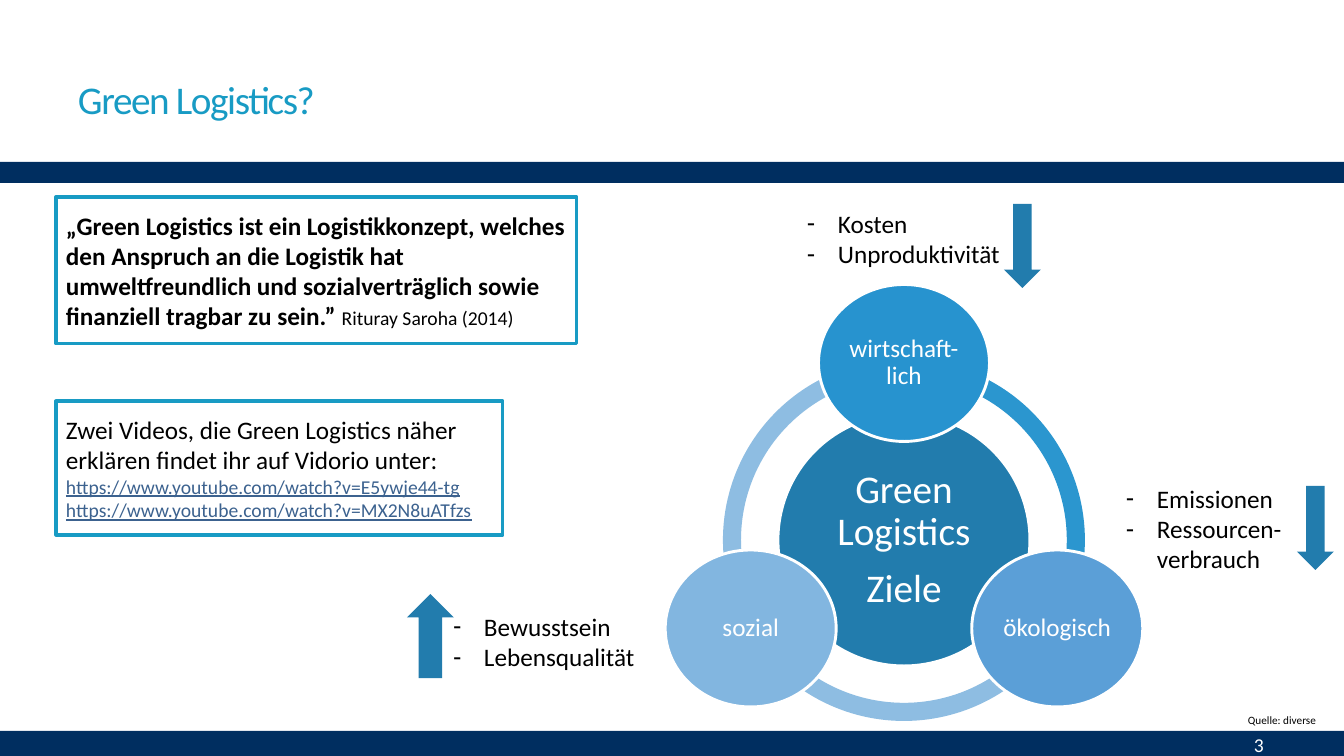
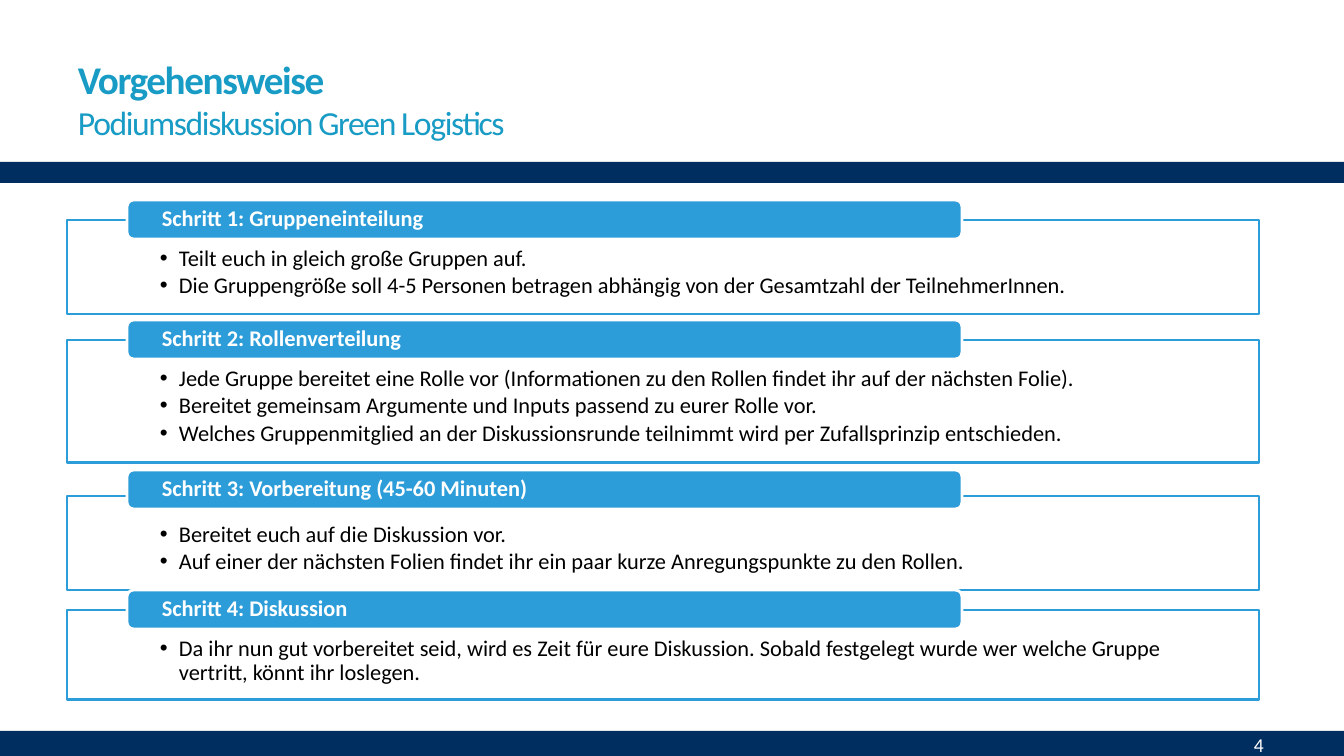
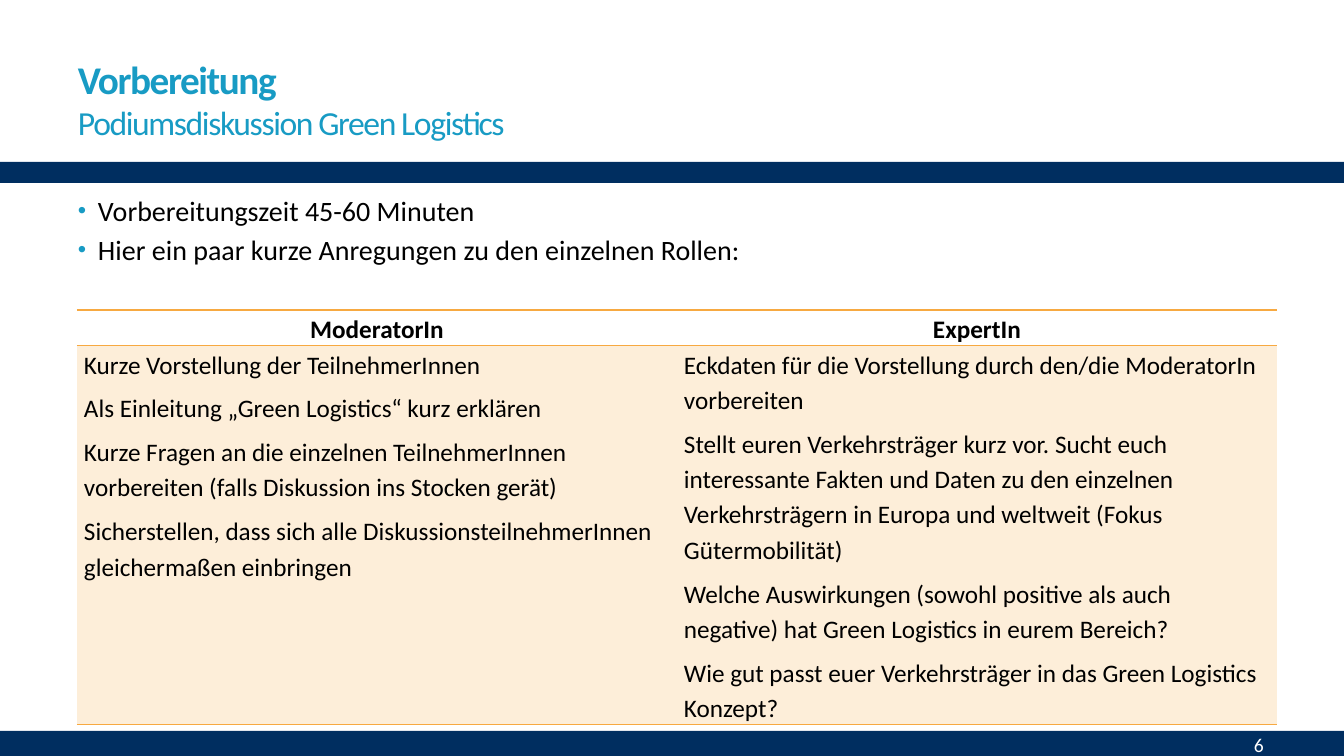
"""Builds three slides on green logistics and a panel discussion."""
import math

import pptx
import pptx.dml.color
import pptx.enum.shapes
import pptx.enum.text
import pptx.oxml
import pptx.oxml.ns
import pptx.util

RGB = pptx.dml.color.RGBColor
SHAPE = pptx.enum.shapes.MSO_SHAPE
ANCHOR = pptx.enum.text.MSO_ANCHOR
ALIGN = pptx.enum.text.PP_ALIGN

NAVY = RGB(0x00, 0x2E, 0x60)
TEAL = RGB(0x18, 0x9B, 0xC4)
STEEL = RGB(0x22, 0x7C, 0xAD)
STEP_BLUE = RGB(0x2D, 0x9D, 0xD9)
ECONOMIC = RGB(0x27, 0x93, 0xCF)
ECOLOGICAL = RGB(0x5B, 0x9F, 0xD7)
SOCIAL = RGB(0x82, 0xB6, 0xE0)
ARC_DARK = RGB(0x2B, 0x96, 0xCF)
ARC_LIGHT = RGB(0x8E, 0xBD, 0xE2)
LINK = RGB(0x3C, 0x62, 0x8F)
ORANGE = RGB(0xF7, 0xA9, 0x41)
PEACH = RGB(0xFD, 0xEE, 0xD9)
BLACK = RGB(0, 0, 0)
WHITE = RGB(255, 255, 255)

FONT = "Calibri"
WIDTH, HEIGHT = 1344, 756
EMU_PER_PX = 914400 / 100.8


def px(length):
    return round(length * EMU_PER_PX)


class Deck:
    """Holds the shared style and the slide being built."""

    def __init__(self):
        self.presentation = pptx.Presentation()
        self.presentation.slide_width = px(WIDTH)
        self.presentation.slide_height = px(HEIGHT)
        self.slide = None

    def start(self, number, heading, subheading=None, with_body=False):
        layout = self.presentation.slide_layouts[1 if with_body else 5]
        self.slide = self.presentation.slides.add_slide(layout)
        self.shape(SHAPE.RECTANGLE, 0, 162, WIDTH, 21, NAVY)
        self.shape(SHAPE.RECTANGLE, 0, 731, WIDTH, HEIGHT - 731, NAVY)
        self.text(1117, 727, 157, 36, [str(number)], 14, WHITE, align=ALIGN.RIGHT, anchor=ANCHOR.MIDDLE)
        title = self.slide.shapes.title
        self.place(title, 68, 44, 905, 109)
        lines = [heading, subheading] if subheading else [heading]
        self.fill_text(title.text_frame, lines, 28, TEAL, anchor=ANCHOR.MIDDLE)
        for paragraph in title.text_frame.paragraphs:
            paragraph.runs[0].font._element.set("spc", "-100")
        if subheading:
            first, second = title.text_frame.paragraphs
            first.runs[0].font.bold = True
            second.runs[0].font.size = pptx.util.Pt(24)

    def place(self, item, left, top, width, height):
        item.left, item.top = px(left), px(top)
        item.width, item.height = px(width), px(height)

    def fill_text(self, frame, lines, size, color, bold=False, align=ALIGN.LEFT, anchor=ANCHOR.TOP,
                  insets=(10, 5, 10, 5), spacing=1.0, gap=0, bullet=None, indent=0, bullet_color=None):
        frame.text = "\n".join(lines)
        frame.word_wrap = True
        frame.auto_size = pptx.enum.text.MSO_AUTO_SIZE.NONE
        frame.vertical_anchor = anchor
        frame.margin_left, frame.margin_top, frame.margin_right, frame.margin_bottom = map(px, insets)
        for index, paragraph in enumerate(frame.paragraphs):
            if bullet:
                self.bullet(paragraph, bullet, indent, bullet_color)
            self.style(paragraph, size, color, bold, align, spacing, gap if index else 0)

    def style(self, paragraph, size, color, bold=False, align=ALIGN.LEFT, spacing=1.0, gap=0):
        paragraph.alignment = align
        paragraph.line_spacing = spacing
        paragraph.space_before = pptx.util.Pt(gap)
        paragraph.space_after = pptx.util.Pt(0)
        for run in paragraph.runs:
            self.font(run, size, color, bold)

    def font(self, run, size, color, bold=False):
        run.font.name = FONT
        run.font.size = pptx.util.Pt(size)
        run.font.color.rgb = color
        run.font.bold = bold

    def bullet(self, paragraph, mark, indent, color=None):
        properties = paragraph._p.get_or_add_pPr()
        properties.set("marL", str(px(indent)))
        properties.set("indent", str(-px(indent)))
        namespace = pptx.oxml.ns.nsdecls("a")
        parts = [f'<a:buFont {namespace} typeface="Arial"/>', f'<a:buChar {namespace} char="{mark}"/>']
        if color is not None:
            parts = [f'<a:buClr {namespace}><a:srgbClr val="{color}"/></a:buClr>',
                     f'<a:buSzPct {namespace} val="85000"/>'] + parts
        for part in parts:
            properties.append(pptx.oxml.parse_xml(part))

    def shape(self, kind, left, top, width, height, fill, line=None, line_width=2.08):
        item = self.slide.shapes.add_shape(kind, px(left), px(top), px(width), px(height))
        item.shadow.inherit = False
        item.fill.solid()
        item.fill.fore_color.rgb = fill
        if line is None:
            item.line.fill.background()
        else:
            item.line.color.rgb = line
            item.line.width = pptx.util.Pt(line_width)
        return item

    def text(self, left, top, width, height, lines, size, color=BLACK, **layout):
        box = self.slide.shapes.add_textbox(px(left), px(top), px(width), px(height))
        self.fill_text(box.text_frame, lines, size, color, **layout)

    def framed(self, left, top, width, height, lines):
        frame = self.shape(SHAPE.RECTANGLE, left, top, width, height, WHITE, TEAL, 2.25).text_frame
        self.fill_text(frame, lines, 18, BLACK, anchor=ANCHOR.MIDDLE)
        return frame

    def circle(self, center_x, center_y, width, height, fill, lines, size):
        item = self.shape(SHAPE.OVAL, center_x - width / 2, center_y - height / 2, width, height, fill, WHITE)
        self.fill_text(item.text_frame, lines, size, WHITE, align=ALIGN.CENTER, anchor=ANCHOR.MIDDLE,
                       insets=(3, 3, 3, 3), spacing=0.9, gap=10)

    def arc(self, center_x, center_y, radius, start, end, fill):
        item = self.shape(SHAPE.BLOCK_ARC, center_x - radius, center_y - radius, 2 * radius, 2 * radius, fill)
        item.adjustments[0] = start * 0.6
        item.adjustments[1] = end * 0.6
        item.adjustments[2] = 0.05

    def effect(self, left, top, width, height, lines):
        self.text(left, top, width, height, lines, 18, bullet="-", indent=31)

    def step(self, label_top, top, height, heading, lines):
        frame = self.shape(SHAPE.RECTANGLE, 67, top, 1192, height, WHITE, STEP_BLUE)
        self.fill_text(frame.text_frame, lines, 16, BLACK, insets=(93, 27, 93, 12), spacing=0.9,
                       gap=2.4, bullet="•", indent=19)
        label = self.shape(SHAPE.ROUNDED_RECTANGLE, 127, label_top, 835, 39, STEP_BLUE, WHITE)
        self.fill_text(label.text_frame, [heading], 16, WHITE, bold=True, anchor=ANCHOR.MIDDLE,
                       insets=(33, 0, 33, 0), spacing=0.9)

    def body(self, left, top, width, height, lines):
        placeholder = self.slide.placeholders[1]
        self.place(placeholder, left, top, width, height)
        self.fill_text(placeholder.text_frame, lines, 20, BLACK, gap=4, bullet="•", indent=20,
                       bullet_color=TEAL)

    def table(self, left, top, column_width, row_heights, columns):
        frame = self.slide.shapes.add_table(len(row_heights), len(columns), px(left), px(top),
                                            px(column_width * len(columns)), px(sum(row_heights)))
        grid = frame.table
        grid.first_row = grid.horz_banding = False
        for row, height in zip(grid.rows, row_heights):
            row.height = px(height)
        for column, (heading, lines) in enumerate(columns):
            grid.columns[column].width = px(column_width)
            self.cell(grid.cell(0, column), [heading], None, bold=True, align=ALIGN.CENTER)
            self.cell(grid.cell(1, column), lines, PEACH)

    def cell(self, cell, lines, fill, bold=False, align=ALIGN.LEFT):
        cell.text = "\n".join(lines)
        cell.margin_left = cell.margin_right = px(7)
        cell.margin_top = cell.margin_bottom = 0
        for index, paragraph in enumerate(cell.text_frame.paragraphs):
            self.style(paragraph, 18, BLACK, bold, align, 1.15, 6 if index else 0)
        if fill is None:
            cell.fill.background()
        else:
            cell.fill.solid()
            cell.fill.fore_color.rgb = fill
        namespace = pptx.oxml.ns.nsdecls("a")
        visible = f'<a:solidFill><a:srgbClr val="{ORANGE}"/></a:solidFill>'
        for index, (side, paint) in enumerate(
                [("L", "<a:noFill/>"), ("R", "<a:noFill/>"), ("T", visible), ("B", visible)]):
            border = pptx.oxml.parse_xml(f'<a:ln{side} {namespace} w="12700">{paint}</a:ln{side}>')
            cell._tc.get_or_add_tcPr().insert(index, border)


def goals(deck):
    deck.start(3, "Green Logistics?")
    quote = deck.framed(56, 197, 521, 147, [
        "„Green Logistics ist ein Logistikkonzept, welches den Anspruch an die Logistik hat "
        "umweltfreundlich und sozialverträglich sowie finanziell tragbar zu sein.” "])
    quote.paragraphs[0].runs[0].font.bold = True
    author = quote.paragraphs[0].add_run()
    author.text = "Rituray Saroha (2014)"
    deck.font(author, 14, BLACK)

    videos = deck.framed(56, 401, 447, 134, [
        "Zwei Videos, die Green Logistics näher erklären findet ihr auf Vidorio unter:",
        "https://www.youtube.com/watch?v=E5ywje44-tg",
        "https://www.youtube.com/watch?v=MX2N8uATfzs"])
    for address in videos.paragraphs[1:]:
        deck.font(address.runs[0], 14, LINK)
        address.runs[0].font.underline = True

    center_x, center_y, orbit = 904, 540, 177
    for start, fill in [(30, ARC_LIGHT), (150, ARC_LIGHT), (270, ARC_DARK)]:
        deck.arc(center_x, center_y, 181, start, (start + 120) % 360, fill)
    deck.circle(center_x, center_y, 252, 252, STEEL, ["Green Logistics", "Ziele"], 28)
    for angle, goal, fill in [(270, "wirtschaft-lich", ECONOMIC), (30, "ökologisch", ECOLOGICAL),
                              (150, "sozial", SOCIAL)]:
        turn = math.radians(angle)
        deck.circle(center_x + orbit * math.cos(turn), center_y + orbit * math.sin(turn),
                    171, 157, fill, [goal], 18)

    deck.effect(443, 606, 246, 72, ["Bewusstsein", "Lebensqualität"])
    deck.effect(797, 203, 278, 72, ["Kosten", "Unproduktivität"])
    deck.effect(1116, 478, 190, 102, ["Emissionen", "Ressourcen-\vverbrauch"])
    deck.shape(SHAPE.UP_ARROW, 407, 594, 47, 84, STEEL)
    for left, top in [(1004, 204), (1297, 486)]:
        deck.shape(SHAPE.DOWN_ARROW, left, top, 37, 84, STEEL)
    deck.text(1238, 708, 105, 24, ["Quelle: diverse"], 8)


def procedure(deck):
    deck.start(4, "Vorgehensweise", "Podiumsdiskussion Green Logistics")
    steps = [
        (220, 94, "Schritt 1: Gruppeneinteilung", [
            "Teilt euch in gleich große Gruppen auf.",
            "Die Gruppengröße soll 4-5 Personen betragen abhängig von der Gesamtzahl der TeilnehmerInnen."]),
        (340, 123, "Schritt 2: Rollenverteilung", [
            "Jede Gruppe bereitet eine Rolle vor (Informationen zu den Rollen findet ihr auf der nächsten Folie).",
            "Bereitet gemeinsam Argumente und Inputs passend zu eurer Rolle vor.",
            "Welches Gruppenmitglied an der Diskussionsrunde teilnimmt wird per Zufallsprinzip entschieden."]),
        (496, 94, "Schritt 3: Vorbereitung (45-60 Minuten)", [
            "Bereitet euch auf die Diskussion vor.",
            "Auf einer der nächsten Folien findet ihr ein paar kurze Anregungspunkte zu den Rollen."]),
        (610, 90, "Schritt 4: Diskussion", [
            "Da ihr nun gut vorbereitet seid, wird es Zeit für eure Diskussion. Sobald festgelegt wurde "
            "wer welche Gruppe vertritt, könnt ihr loslegen."]),
    ]
    label_top = 200
    for top, height, heading, lines in steps:
        deck.step(label_top, top, height, heading, lines)
        label_top += 60 + 30 * len(lines)


def preparation(deck):
    deck.start(6, "Vorbereitung", "Podiumsdiskussion Green Logistics", with_body=True)
    deck.body(68, 188, 1210, 100, [
        "Vorbereitungszeit 45-60 Minuten",
        "Hier ein paar kurze Anregungen zu den einzelnen Rollen:"])
    deck.table(77, 310, 600, [35, 379], [
        ("ModeratorIn", [
            "Kurze Vorstellung der TeilnehmerInnen",
            "Als Einleitung „Green Logistics“ kurz erklären",
            "Kurze Fragen an die einzelnen TeilnehmerInnen vorbereiten (falls Diskussion ins Stocken gerät)",
            "Sicherstellen, dass sich alle DiskussionsteilnehmerInnen gleichermaßen einbringen"]),
        ("ExpertIn", [
            "Eckdaten für die Vorstellung durch den/die ModeratorIn vorbereiten",
            "Stellt euren Verkehrsträger kurz vor. Sucht euch interessante Fakten und Daten zu den einzelnen "
            "Verkehrsträgern in Europa und weltweit (Fokus Gütermobilität)",
            "Welche Auswirkungen (sowohl positive als auch negative) hat Green Logistics in eurem Bereich?",
            "Wie gut passt euer Verkehrsträger in das Green Logistics Konzept?"]),
    ])


def main():
    deck = Deck()
    goals(deck)
    procedure(deck)
    preparation(deck)
    deck.presentation.save("out.pptx")


if __name__ == "__main__":
    main()
